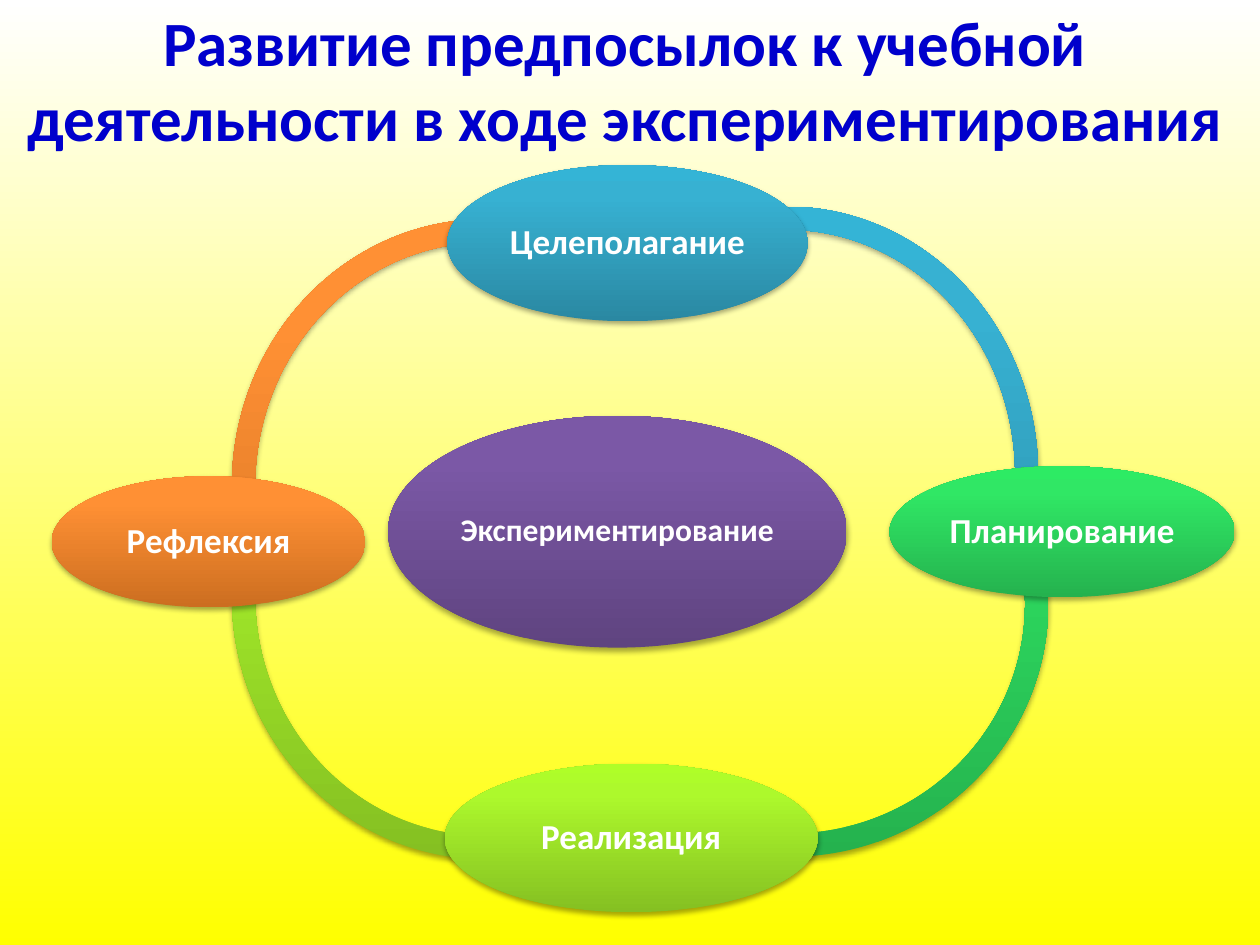
from copy import deepcopy
from dataclasses import dataclass

from lxml import etree
from pptx import Presentation
from pptx.dml.color import RGBColor
from pptx.enum.shapes import MSO_SHAPE as SHAPE
from pptx.enum.text import MSO_ANCHOR as ANCHOR, MSO_AUTO_SIZE as AUTOSIZE, PP_ALIGN as ALIGN
from pptx.oxml.ns import qn
from pptx.util import Inches, Pt


@dataclass(frozen=True)
class Theme:
    font: str = "Calibri"
    title_size: int = 36
    center_size: int = 18
    stage_size: int = 20
    title: str = "0000CC"
    text: str = "FFFFFF"
    # Gradients run from bottom to top
    background: tuple = ((0, "FFFF00"), (1, "FFFFFF"))
    blue: tuple = ((0, "2A88A2"), (0.8, "37B1D2"), (1, "34B4D6"))
    green: tuple = ((0, "25B24E"), (0.8, "30E765"), (1, "2DEB64"))
    lime: tuple = ((0, "85C022"), (0.8, "ADF92C"), (1, "AFFE28"))
    orange: tuple = ((0, "CC6E20"), (0.8, "FF9034"), (1, "FF9136"))
    purple: tuple = ((0, "5F4480"), (0.8, "7B58A6"), (1, "7C57A8"))


THEME = Theme()
RING_THICKNESS = 0.046

# Box, start and end angle in degrees, gradient
ARCS = [
    ((1.84, 1.74, 4.02, 4.24), 168.63, 300.17, THEME.orange),
    ((1.84, 2.64, 4.03, 4.18), 58.97, 190.97, THEME.lime),
    ((4.22, 2.79, 4.1, 4.01), 344.92, 124.42, THEME.green),
    ((4.25, 1.64, 3.99, 4.26), 235.61, 11.45, THEME.blue),
]

# Label, box, gradient, text size
OVALS = [
    ("Экспериментирование", (3.08, 3.3, 3.64, 1.84), THEME.purple, THEME.center_size),
    ("Целеполагание", (3.55, 1.31, 2.86, 1.24), THEME.blue, THEME.stage_size),
    ("Планирование", (7.06, 3.7, 2.74, 1.04), THEME.green, THEME.stage_size),
    ("Реализация", (3.53, 6.06, 2.96, 1.18), THEME.lime, THEME.stage_size),
    ("Рефлексия", (0.41, 3.78, 2.49, 1.04), THEME.orange, THEME.stage_size),
]


def set_gradient(fill, stops):
    fill.gradient()
    fill.gradient_angle = 90
    first = fill.gradient_stops[0]._gs
    for _ in range(len(stops) - len(fill.gradient_stops)):
        first.addnext(deepcopy(first))
    for stop, (position, color) in zip(fill.gradient_stops, stops):
        stop.position = position
        stop.color.rgb = RGBColor.from_string(color)


def add_shadow(sp):
    sp.shadow.inherit = False
    effects = sp._element.spPr.find(qn("a:effectLst"))
    shadow = etree.SubElement(effects, qn("a:outerShdw"), blurRad=str(Pt(3.1)),
                              dist=str(Pt(1.8)), dir="5400000", rotWithShape="0")
    color = etree.SubElement(shadow, qn("a:srgbClr"), val="000000")
    etree.SubElement(color, qn("a:alpha"), val="35000")


def write_text(tf, text, *, size, color, spacing=1.0, inset=None):
    tf.word_wrap = True
    tf.auto_size = AUTOSIZE.NONE
    tf.vertical_anchor = ANCHOR.MIDDLE
    if inset is not None:
        tf.margin_left = tf.margin_right = tf.margin_top = tf.margin_bottom = Inches(inset)
    p = tf.paragraphs[0]
    p.alignment = ALIGN.CENTER
    p.line_spacing = spacing
    r = p.add_run()
    r.text = text
    r.font.name = THEME.font
    r.font.size = Pt(size)
    r.font.bold = True
    r.font.color.rgb = RGBColor.from_string(color)


def add_title(s, text, box):
    sp = s.shapes.title
    sp.left, sp.top, sp.width, sp.height = map(Inches, box)
    write_text(sp.text_frame, text, size=THEME.title_size, color=THEME.title)


def add_figure(s, kind, box, gradient):
    sp = s.shapes.add_shape(kind, *map(Inches, box))
    set_gradient(sp.fill, gradient)
    sp.line.fill.background()
    add_shadow(sp)
    return sp


def add_arc(s, box, start, end, gradient):
    sp = add_figure(s, SHAPE.BLOCK_ARC, box, gradient)
    # Angles are stored in 1/60000 degree, adjustments in 1/100000
    sp.adjustments[0] = start * 0.6
    sp.adjustments[1] = end * 0.6
    sp.adjustments[2] = RING_THICKNESS


def add_oval(s, text, box, gradient, size):
    sp = add_figure(s, SHAPE.OVAL, box, gradient)
    write_text(sp.text_frame, text, size=size, color=THEME.text, spacing=0.9, inset=0.03)


def main():
    prs = Presentation()
    prs.slide_width, prs.slide_height = Inches(10), Inches(7.5)
    s = prs.slides.add_slide(prs.slide_layouts[5])
    set_gradient(s.background.fill, THEME.background)

    # Heading
    add_title(s, "Развитие предпосылок к учебной деятельности в ходе экспериментирования",
              (0.04, 0, 9.84, 1.25))

    # Ring behind the stages
    for arc in ARCS:
        add_arc(s, *arc)

    # Centre and the four stages
    for oval in OVALS:
        add_oval(s, *oval)

    prs.save("out.pptx")


if __name__ == "__main__":
    main()
